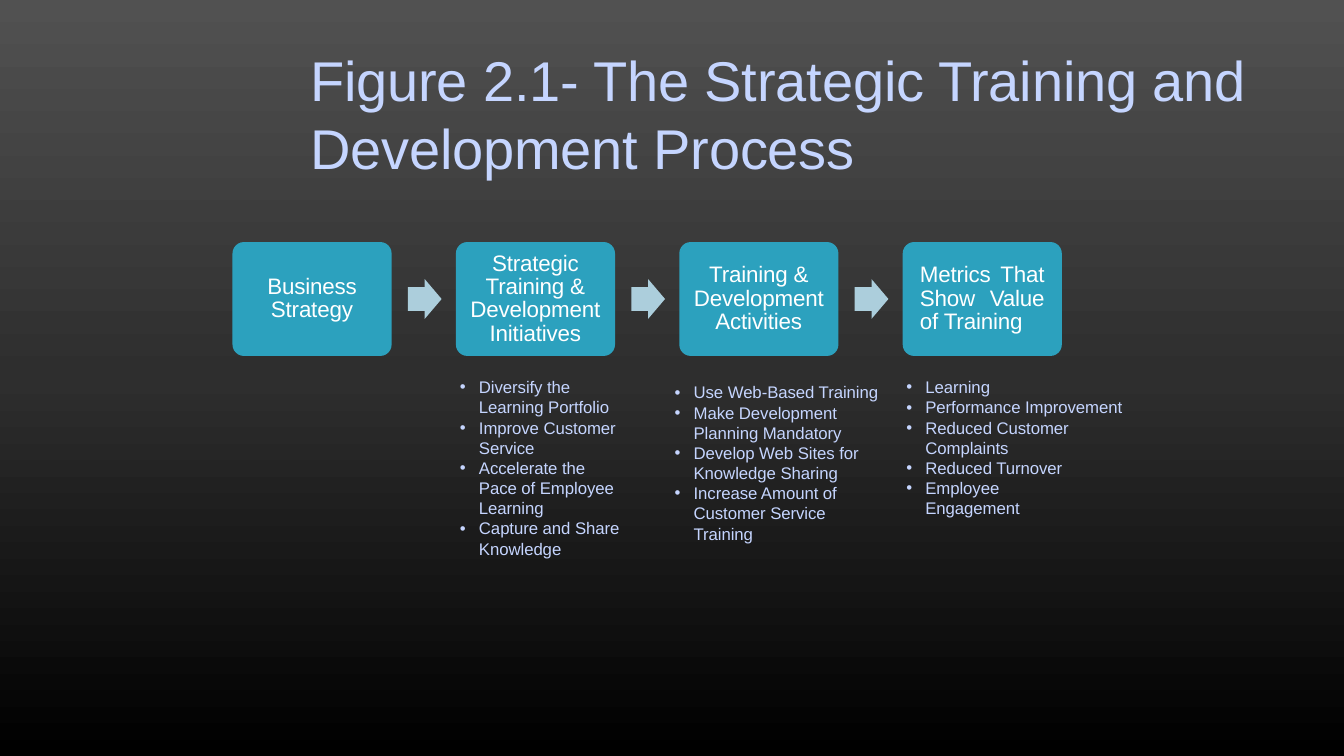
import copy
from dataclasses import dataclass

import pptx
import pptx.dml.color
import pptx.enum.shapes
import pptx.enum.text
import pptx.oxml.ns
import pptx.shapes.autoshape
import pptx.slide
import pptx.util
from lxml import etree

Cm = pptx.util.Cm
Pt = pptx.util.Pt
RGBColor = pptx.dml.color.RGBColor
Align = pptx.enum.text.PP_ALIGN
Anchor = pptx.enum.text.MSO_ANCHOR
Shape = pptx.enum.shapes.MSO_SHAPE
qn = pptx.oxml.ns.qn

PALE_BLUE = RGBColor(0xC5, 0xD5, 0xFF)
TEAL = RGBColor(0x2C, 0xA1, 0xBE)
ARROW_BLUE = RGBColor(0xAC, 0xCE, 0xDC)
WHITE = RGBColor(0xFF, 0xFF, 0xFF)
BACKDROP = (
    (0, RGBColor(0x51, 0x51, 0x51)),
    (0.5, RGBColor(0x2E, 0x2E, 0x2E)),
    (1, RGBColor(0, 0, 0)),
)

STEP_LEFT, STEP_TOP, STEP_PITCH = 5.86, 6.1, 5.63
STEP_WIDTH, STEP_HEIGHT = 4.01, 2.87
ARROW_OFFSET, ARROW_WIDTH, ARROW_HEIGHT = 4.42, 0.85, 1.0


@dataclass
class Step:
    label: str
    align: Align = Align.CENTER
    margin: float = 0.2


@dataclass
class BulletList:
    placeholder: int
    left: float
    top: float
    width: float
    height: float
    items: tuple[str, ...]


STEPS = (
    Step("Business Strategy"),
    Step("Strategic Training & Development Initiatives"),
    Step("Training & Development Activities"),
    Step("Metrics That Show Value of Training", Align.JUSTIFY, 0.35),
)

LISTS = (
    BulletList(2, 11.56, 9.5, 4.19, 4.62, (
        "Diversify the Learning Portfolio",
        "Improve Customer Service",
        "Accelerate the Pace of Employee Learning",
        "Capture and Share Knowledge",
    )),
    BulletList(3, 16.97, 9.63, 5.33, 4.11, (
        "Use Web-Based Training",
        "Make Development Planning Mandatory",
        "Develop Web Sites for Knowledge Sharing",
        "Increase Amount of Customer Service Training",
    )),
    BulletList(4, 22.81, 9.5, 5.7, 3.07, (
        "Learning",
        "Performance Improvement",
        "Reduced Customer Complaints",
        "Reduced Turnover",
        "Employee\vEngagement",
    )),
)


def write(
    box: pptx.shapes.autoshape.Shape,
    *texts: str,
    size: float,
    color: RGBColor,
    align: Align = Align.LEFT,
    anchor: Anchor = Anchor.TOP,
    margin: float = 0,
    indent: float = 0,
    hanging: float = 0,
    bullet: str = "",
    line_height: float | None = None,
    tracking: float = 0,
) -> None:
    """Fill the box with one paragraph per text; lengths in cm, type in points."""
    frame = box.text_frame
    frame.word_wrap = True
    frame.auto_size = pptx.enum.text.MSO_AUTO_SIZE.NONE
    frame.vertical_anchor = anchor
    frame.margin_left = frame.margin_right = Cm(margin)
    frame.margin_top = frame.margin_bottom = 0
    frame.text = "\n".join(texts)
    for para in frame.paragraphs:
        para.alignment = align
        para.space_before = para.space_after = Pt(0)
        para.line_spacing = Pt(line_height) if line_height else 1.0
        properties = para._p.get_or_add_pPr()
        properties.set("marL", str(Cm(indent)))
        properties.set("indent", str(-Cm(hanging)))
        if bullet:
            etree.SubElement(properties, qn("a:buFont"), typeface="Arial")
            etree.SubElement(properties, qn("a:buChar"), char=bullet)
        for span in para.runs:
            span.font.name = "Arial"
            span.font.size = Pt(size)
            span.font.bold = False
            span.font.color.rgb = color
            span._r.get_or_add_rPr().set("spc", str(round(tracking * 100)))


def place(box: pptx.shapes.autoshape.Shape, left: float, top: float,
          width: float, height: float) -> None:
    box.left, box.top = Cm(left), Cm(top)
    box.width, box.height = Cm(width), Cm(height)


def add_block(
    page: pptx.slide.Slide, kind: Shape, left: float, top: float, width: float,
    height: float, color: RGBColor, adjustments: tuple[float, ...],
) -> pptx.shapes.autoshape.Shape:
    block = page.shapes.add_shape(kind, Cm(left), Cm(top), Cm(width), Cm(height))
    block.shadow.inherit = False
    block.fill.solid()
    block.fill.fore_color.rgb = color
    block.line.fill.background()
    for index, value in enumerate(adjustments):
        block.adjustments[index] = value
    return block


def paint_backdrop(page: pptx.slide.Slide) -> None:
    fill = page.background.fill
    fill.gradient()
    fill.gradient_angle = 270
    stops = page._element.find(".//" + qn("a:gsLst"))
    stops.append(copy.deepcopy(stops[0]))
    for stop, (position, color) in zip(fill.gradient_stops, BACKDROP):
        stop.position = position
        stop.color.rgb = color


def draw_steps(page: pptx.slide.Slide) -> None:
    arrow_top = STEP_TOP + (STEP_HEIGHT - ARROW_HEIGHT) / 2
    for index, step in enumerate(STEPS):
        left = STEP_LEFT + index * STEP_PITCH
        block = add_block(page, Shape.ROUNDED_RECTANGLE, left, STEP_TOP,
                          STEP_WIDTH, STEP_HEIGHT, TEAL, (0.1,))
        write(block, step.label, size=16, color=WHITE, align=step.align,
              anchor=Anchor.MIDDLE, margin=step.margin, line_height=16.6,
              tracking=-0.1)
        if index < len(STEPS) - 1:
            add_block(page, Shape.RIGHT_ARROW, left + ARROW_OFFSET, arrow_top,
                      ARROW_WIDTH, ARROW_HEIGHT, ARROW_BLUE, (0.6, 0.5))


def main() -> None:
    deck = pptx.Presentation()
    deck.slide_width, deck.slide_height = Cm(33.87), Cm(19.05)
    page = deck.slides.add_slide(deck.slide_layouts.get_by_name("Comparison"))
    paint_backdrop(page)

    title = page.shapes.title
    place(title, 6.55, 0.97, 27.3, 3.76)
    write(title, "Figure 2.1- The Strategic Training and Development Process",
          size=40, color=PALE_BLUE, anchor=Anchor.MIDDLE, indent=1.27,
          tracking=-0.1)

    draw_steps(page)

    bodies = {body.placeholder_format.idx: body for body in page.placeholders}
    for entry in LISTS:
        body = bodies[entry.placeholder]
        place(body, entry.left, entry.top, entry.width, entry.height)
        write(body, *entry.items, size=12, color=PALE_BLUE, indent=0.51,
              hanging=0.48, bullet="•", tracking=-0.05)
    spare = bodies[1]._element
    spare.getparent().remove(spare)

    deck.save("out.pptx")


if __name__ == "__main__":
    main()
